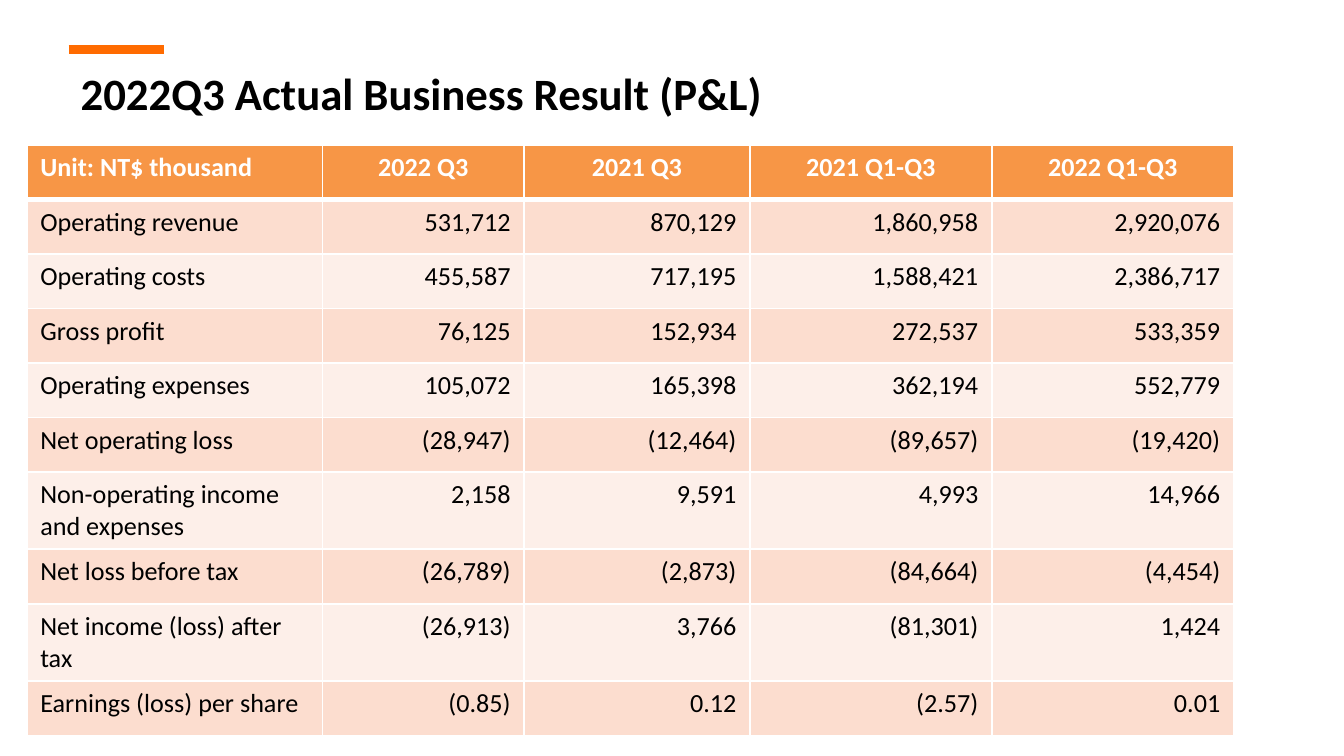
from pptx import Presentation
from pptx import util as u
from pptx.dml.color import RGBColor
from pptx.enum import shapes, text
from pptx.oxml import parse_xml
from pptx.oxml.ns import nsdecls

# Content
TITLE = "2022Q3 Actual Business Result (P&L)"
HEAD = ("Unit: NT$ thousand", "2022 Q3", "2021 Q3", "2021 Q1-Q3", "2022 Q1-Q3")
ROWS = [
    ("Operating revenue", "531,712", "870,129", "1,860,958", "2,920,076"),
    ("Operating costs", "455,587", "717,195", "1,588,421", "2,386,717"),
    ("Gross profit", "76,125", "152,934", "272,537", "533,359"),
    ("Operating expenses", "105,072", "165,398", "362,194", "552,779"),
    ("Net operating loss", "(28,947)", "(12,464)", "(89,657)", "(19,420)"),
    ("Non-operating income and expenses", "2,158", "9,591", "4,993", "14,966"),
    ("Net loss before tax", "(26,789)", "(2,873)", "(84,664)", "(4,454)"),
    ("Net income (loss) after tax", "(26,913)", "3,766", "(81,301)", "1,424"),
    ("Earnings (loss) per share", "(0.85)", "0.12", "(2.57)", "0.01"),
]
WIDTHS = (2.2, 1.5, 1.68, 1.8, 1.8)
ROW_H = u.Pt(29.2)

THEME = {
    "font": "Calibri", "title": 24, "cell": 14,
    "ink": "000000", "white": "FFFFFF", "accent": "FF6B00",
    "head": "F79646", "bands": ("FCDDCF", "FDEFE9"),
}


def color(name):
    return RGBColor.from_string(name)


def style(para, size, ink, bold):
    for run in para.runs:
        font = run.font
        font.name, font.size, font.bold = THEME["font"], u.Pt(size), bold
        font.color.rgb = color(ink)


def border(cell, base):
    """Rule all four sides of a cell; base is the bottom width in points."""
    props = cell._tc.get_or_add_tcPr()
    sides = (("lnL", 1), ("lnR", 1), ("lnT", 1), ("lnB", base))
    for i, (side, width) in enumerate(sides):
        props.insert(i, parse_xml(
            f'<a:{side} {nsdecls("a")} w="{u.Pt(width)}"><a:solidFill>'
            f'<a:srgbClr val="{THEME["white"]}"/></a:solidFill></a:{side}>'))


# Widescreen 16:9 page
deck = Presentation()
deck.slide_width = u.Inches(10)
deck.slide_height = u.Inches(10) * 9 // 16
slide = deck.slides.add_slide(deck.slide_layouts[5])

# Accent rule
rule = slide.shapes.add_connector(
    shapes.MSO_CONNECTOR.STRAIGHT,
    u.Inches(0.51), u.Inches(0.37), u.Inches(1.22), u.Inches(0.37))
rule.line.color.rgb = color(THEME["accent"])
rule.line.width = u.Pt(4.5)
rule._element.spPr.append(parse_xml(f'<a:effectLst {nsdecls("a")}/>'))

# Title
title = slide.shapes.title
title.left, title.top = u.Inches(0.5), u.Inches(0.37)
title.width, title.height = u.Inches(9.62), u.Inches(0.63)
frame = title.text_frame
frame.text = TITLE
frame.vertical_anchor = text.MSO_ANCHOR.MIDDLE
frame.paragraphs[0].alignment = text.PP_ALIGN.LEFT
style(frame.paragraphs[0], THEME["title"], THEME["ink"], True)

# Results table
data = [HEAD] + ROWS
table = slide.shapes.add_table(
    len(data), len(HEAD), u.Inches(0.2), u.Inches(1.08),
    u.Inches(sum(WIDTHS)), ROW_H * len(data)).table
for col, width in zip(table.columns, WIDTHS):
    col.width = u.Inches(width)
for r, values in enumerate(data):
    table.rows[r].height = ROW_H
    top = r == 0
    fill = THEME["head"] if top else THEME["bands"][(r - 1) % 2]
    ink = THEME["white"] if top else THEME["ink"]
    side = text.PP_ALIGN.CENTER if top else text.PP_ALIGN.RIGHT
    for c, value in enumerate(values):
        cell = table.cell(r, c)
        cell.text_frame.text = value
        para = cell.text_frame.paragraphs[0]
        para.alignment = side if c else text.PP_ALIGN.LEFT
        style(para, THEME["cell"], ink, top)
        cell.fill.solid()
        cell.fill.fore_color.rgb = color(fill)
        border(cell, 3 if top else 1)

deck.save("out.pptx")
